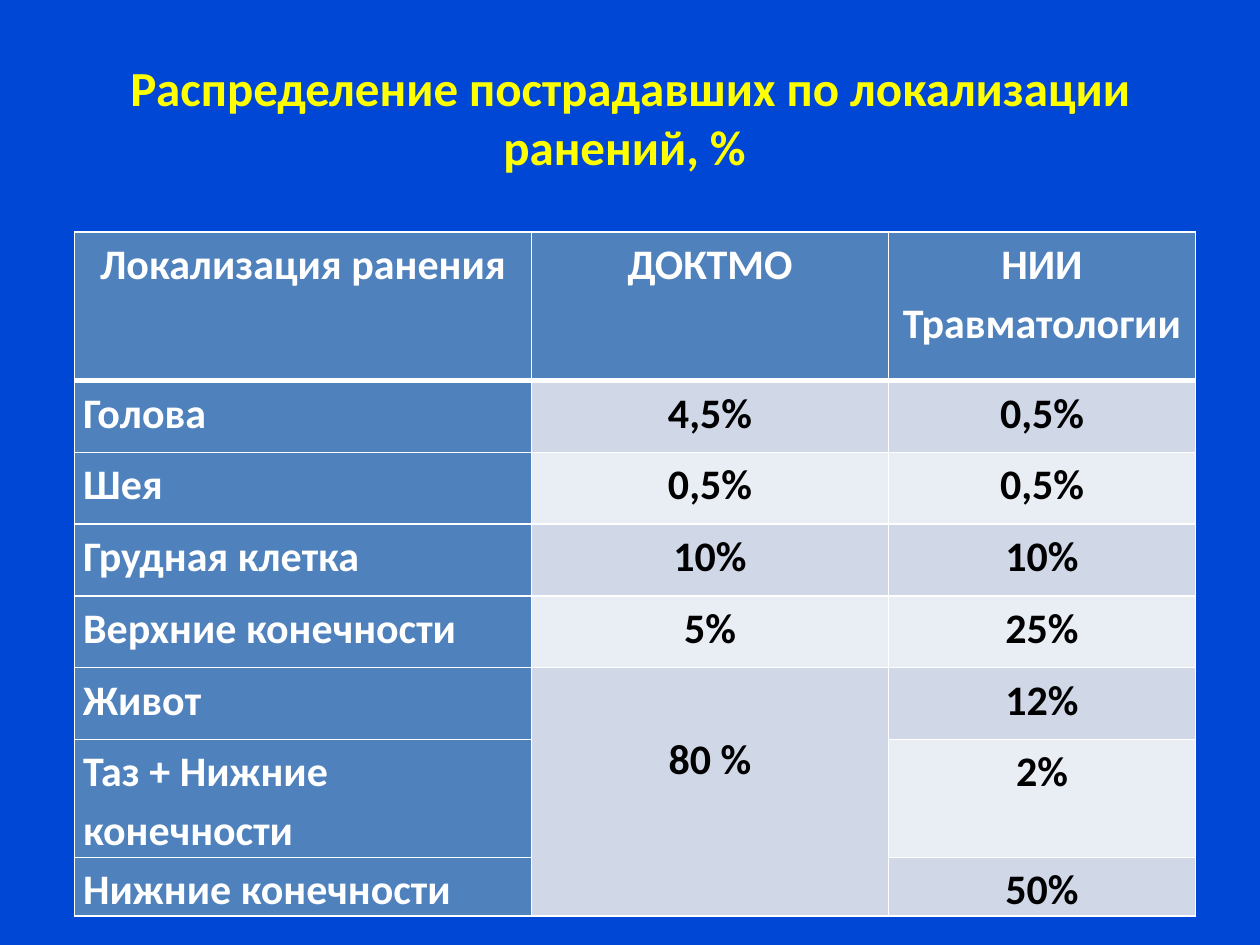
from dataclasses import dataclass
from lxml.etree import SubElement
from pptx import Presentation
from pptx.dml.color import RGBColor
from pptx.enum.text import MSO_ANCHOR, PP_ALIGN
from pptx.oxml.ns import qn
from pptx.util import Inches, Pt

BLUE = RGBColor(0x00, 0x47, 0xD6)
YELLOW = RGBColor(0xFF, 0xFF, 0x00)
WHITE = RGBColor(0xFF, 0xFF, 0xFF)
BLACK = RGBColor(0x00, 0x00, 0x00)
STEEL = RGBColor(0x4F, 0x81, 0xBD)
BANDS = (RGBColor(0xE9, 0xED, 0xF4), RGBColor(0xD0, 0xD8, 0xE8))

WIDTH, HEIGHT = Inches(10), Inches(7.5)
FONT = "Calibri"
COLS = (3.63, 2.83, 2.44)
MERGED = 5


@dataclass(frozen=True)
class Row:
    place: str
    first: str
    second: str
    height: float = 0.57


ROWS = (
    Row("Локализация ранения", "ДОКТМО", "НИИ Травматологии", 1.18),
    Row("Голова", "4,5%", "0,5%"),
    Row("Шея", "0,5%", "0,5%"),
    Row("Грудная клетка", "10%", "10%"),
    Row("Верхние конечности", "5%", "25%"),
    Row("Живот", "80 %", "12%"),
    Row("Таз + Нижние конечности", "", "2%"),
    Row("Нижние конечности", "", "50%", 0.33),
)


def write(frame, text: str, size: int, color: RGBColor, align: PP_ALIGN) -> None:
    par = frame.paragraphs[0]
    par.alignment = align
    run = par.add_run()
    run.text = text
    font = run.font
    font.name, font.size, font.bold = FONT, Pt(size), True
    font.color.rgb = color


def edge(cell, side: str, width: float) -> None:
    line = SubElement(cell._tc.get_or_add_tcPr(), qn(f"a:ln{side}"), w=str(Pt(width)))
    fill = SubElement(line, qn("a:solidFill"))
    SubElement(fill, qn("a:srgbClr"), val=str(WHITE))


def style(cell, row: int, col: int) -> None:
    cell.margin_left = cell.margin_right = Inches(0.07)
    cell.margin_top = cell.margin_bottom = 0
    for side in "LRTB":
        thick = (row, side) in ((0, "B"), (1, "T"))
        edge(cell, side, 3 if thick else 1)
    cell.fill.solid()
    head = row == 0 or col == 0
    cell.fill.fore_color.rgb = STEEL if head else BANDS[row % 2]


def fill_cell(cell, text: str, row: int, col: int) -> None:
    style(cell, row, col)
    if not text:
        return
    head = row == 0 or col == 0
    align = PP_ALIGN.LEFT if row and col == 0 else PP_ALIGN.CENTER
    write(cell.text_frame, text, 24, WHITE if head else BLACK, align)
    cell.text_frame.paragraphs[0].line_spacing = 1.15


def draw_title(slide) -> None:
    title = slide.shapes.title
    title.left, title.top = int(WIDTH * 0.05), int(HEIGHT * 0.04)
    title.width, title.height = int(WIDTH * 0.9), Inches(1.25)
    frame = title.text_frame
    frame.word_wrap = True
    frame.vertical_anchor = MSO_ANCHOR.MIDDLE
    text = "Распределение пострадавших по локализации ранений, % "
    write(frame, text, 28, YELLOW, PP_ALIGN.CENTER)


def draw_table(slide) -> None:
    table = slide.shapes.add_table(
        len(ROWS), len(COLS), Inches(0.59), Inches(1.84), Inches(8.9), Inches(5.43)
    ).table
    for col, width in zip(table.columns, COLS):
        col.width = Inches(width)
    for r, row in enumerate(ROWS):
        table.rows[r].height = Inches(row.height)
        for c, text in enumerate((row.place, row.first, row.second)):
            fill_cell(table.cell(r, c), text, r, c)
    joint = table.cell(MERGED, 1)
    joint.merge(table.cell(len(ROWS) - 1, 1))
    joint.margin_top = Inches(0.47)


def main() -> None:
    deck = Presentation()
    deck.slide_width, deck.slide_height = WIDTH, HEIGHT
    slide = deck.slides.add_slide(deck.slide_layouts[5])
    slide.background.fill.solid()
    slide.background.fill.fore_color.rgb = BLUE
    draw_title(slide)
    draw_table(slide)
    deck.save("out.pptx")


if __name__ == "__main__":
    main()
